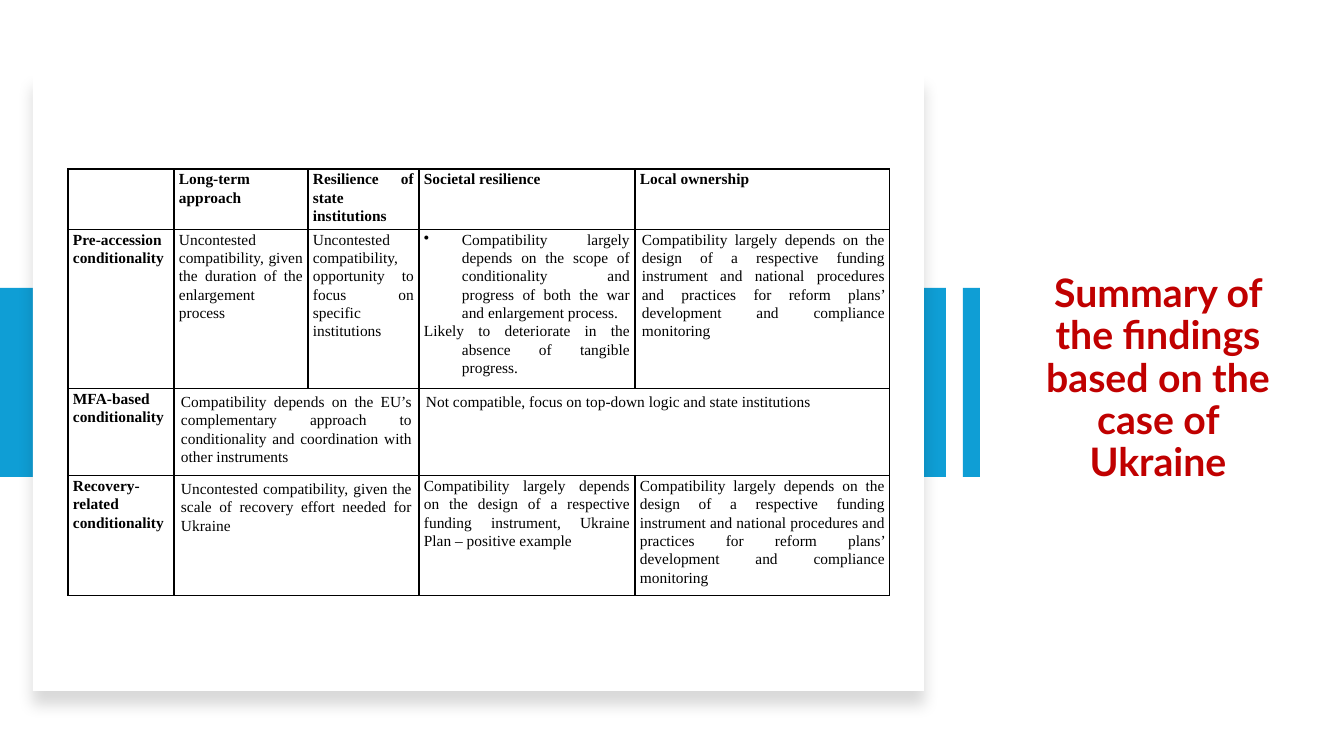
from lxml.etree import SubElement
from pptx import Presentation
from pptx.dml.color import RGBColor
from pptx.enum.shapes import MSO_SHAPE
from pptx.enum.text import MSO_ANCHOR, PP_ALIGN
from pptx.oxml import parse_xml
from pptx.oxml.ns import nsdecls, qn
from pptx.util import Emu, Pt

BLUE = RGBColor(0x0F, 0x9E, 0xD5)
WHITE = RGBColor(0xFF, 0xFF, 0xFF)
BLACK = RGBColor(0x00, 0x00, 0x00)
RED = RGBColor(0xC0, 0x00, 0x00)

TITLE = "Summary of the findings based on the case of Ukraine"
OWNERSHIP = (
    "Compatibility largely depends on the design of a respective funding instrument and "
    "national procedures and practices for reform plans’ development and compliance monitoring"
)
HEADERS = ["", "Long-term approach", "Resilience of state institutions",
           "Societal resilience", "Local ownership"]
SOCIETAL = [
    "Compatibility largely depends on the scope of conditionality and progress of both "
    "the war and enlargement process.",
    "Likely to deteriorate in the absence of tangible progress.",
]
FINDINGS = [
    ("Pre-accession conditionality", [
        (1, "Uncontested compatibility, given the duration of the enlargement process"),
        (1, "Uncontested compatibility, opportunity to focus on specific institutions"),
        (1, SOCIETAL),
        (1, OWNERSHIP),
    ]),
    ("MFA-based conditionality", [
        (2, "Compatibility depends on the EU’s complementary approach to conditionality "
            "and coordination with other instruments"),
        (2, "Not compatible, focus on top-down logic and state institutions"),
    ]),
    ("Recovery-related conditionality", [
        (2, "Uncontested compatibility, given the scale of recovery effort needed for Ukraine"),
        (1, "Compatibility largely depends on the design of a respective funding instrument, "
            "Ukraine Plan – positive example"),
        (1, OWNERSHIP),
    ]),
]
COLUMNS = [106, 134, 111, 216, 255]
ROWS = [56, 147, 81, 111]
TABLE_LEFT, TABLE_TOP = 68, 169
BAR_TOP, BAR_HEIGHT = 288, 189
HANGING = 38
OWNERSHIP_INDENT = 2


def px(length):
    return Emu(round(length * 914400 / 100.8))


def add_panel(page, color, *place):
    panel = page.shapes.add_shape(MSO_SHAPE.RECTANGLE, *map(px, place))
    panel.shadow.inherit = False
    panel.fill.solid()
    panel.fill.fore_color.rgb = color
    panel.line.fill.background()
    return panel


def add_soft_shadow(panel):
    effects = panel._element.spPr.find(qn("a:effectLst"))
    effects.append(parse_xml(
        f'<a:outerShdw {nsdecls("a")} blurRad="{Pt(11)}" dist="{Pt(10)}" dir="5400000" '
        'algn="t" rotWithShape="0"><a:srgbClr val="000000"><a:alpha val="15000"/>'
        '</a:srgbClr></a:outerShdw>'))


def style_cell(cell):
    cell.fill.background()
    properties = cell._tc.get_or_add_tcPr()
    for position, side in enumerate("LRTB"):
        properties.insert(position, parse_xml(
            f'<a:ln{side} {nsdecls("a")} w="{Pt(1)}"><a:solidFill>'
            f'<a:srgbClr val="{BLACK}"/></a:solidFill></a:ln{side}>'))


def set_margins(cell, side, top, bottom):
    cell.margin_left = cell.margin_right = px(side)
    cell.margin_top, cell.margin_bottom = px(top), px(bottom)


def style_para(para, bold):
    para.alignment = PP_ALIGN.JUSTIFY
    para.line_spacing = 1.07
    para.font.name = "Times New Roman"
    para.font.size = Pt(11)
    para.font.bold = bold
    para.font.color.rgb = BLACK


def indent(para, left, first=0):
    properties = para._p.get_or_add_pPr()
    properties.set("marL", str(px(left)))
    properties.set("indent", str(px(first)))
    return properties


def fill_cell(cell, content, bold=False):
    lines = content if isinstance(content, list) else [content]
    for number, line in enumerate(lines):
        para = cell.text_frame.add_paragraph() if number else cell.text_frame.paragraphs[0]
        para.text = line
        if len(lines) > 1:
            properties = indent(para, HANGING, -HANGING)
            if number == 0:
                SubElement(properties, qn("a:buChar")).set("char", "•")
        style_para(para, bold)


def add_findings(page):
    frame = page.shapes.add_table(len(ROWS), len(COLUMNS), px(TABLE_LEFT), px(TABLE_TOP),
                                  px(sum(COLUMNS)), px(sum(ROWS)))
    table = frame.table
    table.first_row = table.horz_banding = False
    for column, width in zip(table.columns, COLUMNS):
        column.width = px(width)
    for row, height in zip(table.rows, ROWS):
        row.height = px(height)
    for cell in table.iter_cells():
        style_cell(cell)
        set_margins(cell, 5, 1, 0)
    for column, header in enumerate(HEADERS):
        fill_cell(table.cell(0, column), header, bold=True)
    for row, (label, entries) in enumerate(FINDINGS, 1):
        fill_cell(table.cell(row, 0), label, bold=True)
        column = 1
        for span, content in entries:
            cell = table.cell(row, column)
            if span > 1:
                cell.merge(table.cell(row, column + span - 1))
                set_margins(cell, 7, 4, 4)
            fill_cell(cell, content)
            column += span
    indent(table.cell(1, 4).text_frame.paragraphs[0], OWNERSHIP_INDENT)


def add_title(page):
    box = page.shapes.add_textbox(px(1022), px(223), px(272), px(313))
    box.text_frame.word_wrap = True
    box.text_frame.vertical_anchor = MSO_ANCHOR.MIDDLE
    para = box.text_frame.paragraphs[0]
    para.text = TITLE
    para.alignment = PP_ALIGN.CENTER
    para.line_spacing = 0.9
    para.space_after = Pt(6)
    para.font.name = "Lato"
    para.font.size = Pt(28)
    para.font.bold = True
    para.font.color.rgb = RED


def main():
    deck = Presentation()
    deck.slide_width, deck.slide_height = px(1344), px(756)
    page = deck.slides.add_slide(deck.slide_layouts[6])
    add_title(page)
    add_panel(page, BLUE, 0, BAR_TOP, 946, BAR_HEIGHT)
    add_soft_shadow(add_panel(page, WHITE, 33, 74, 891, 617))
    add_panel(page, BLUE, 963, BAR_TOP, 17, BAR_HEIGHT)
    add_findings(page)
    deck.save("out.pptx")


if __name__ == "__main__":
    main()
